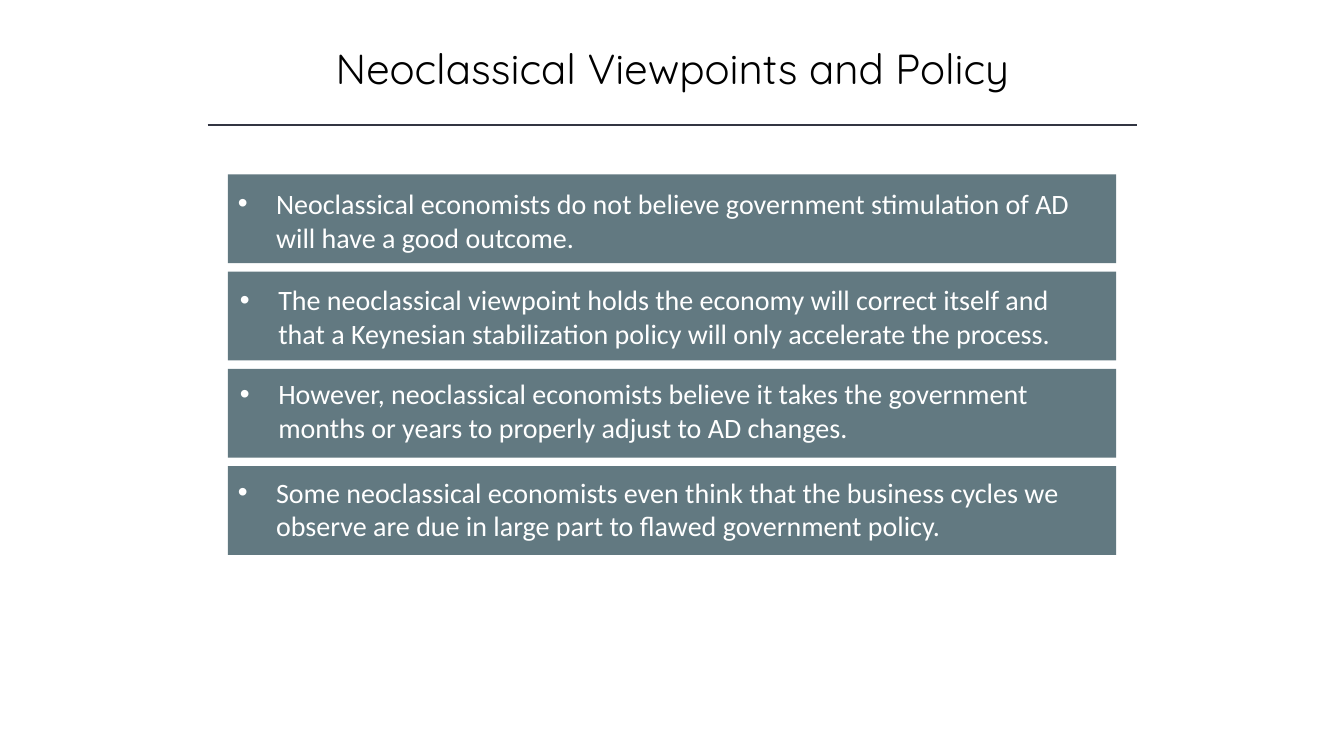
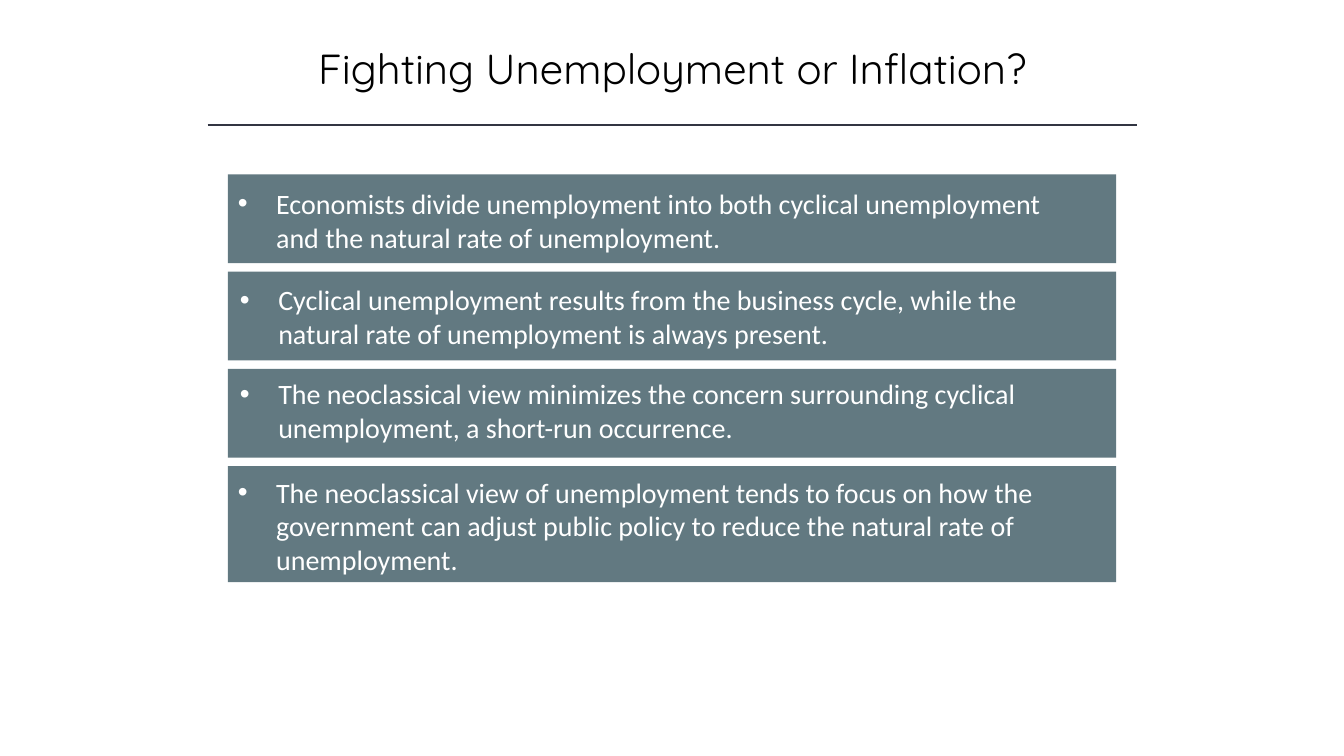
from dataclasses import dataclass

from lxml.etree import SubElement
from pptx import Presentation
from pptx.dml.color import RGBColor
from pptx.enum.shapes import MSO_CONNECTOR, MSO_SHAPE
from pptx.enum.text import MSO_ANCHOR, MSO_AUTO_SIZE, PP_ALIGN
from pptx.oxml.ns import qn
from pptx.util import Inches, Pt


@dataclass(frozen=True)
class Theme:
    title_color: RGBColor = RGBColor(0x00, 0x00, 0x00)
    rule_color: RGBColor = RGBColor(0x32, 0x35, 0x42)
    band_color: RGBColor = RGBColor(0x62, 0x79, 0x81)
    band_text_color: RGBColor = RGBColor(0xFF, 0xFF, 0xFF)
    title_font: str = "Quicksand"
    body_font: str = "Calibri"
    title_size: Pt = Pt(30)
    body_size: Pt = Pt(20)
    rule_width: Pt = Pt(1)


TITLE_ONLY = 5
BAND_LEFT, BAND_WIDTH = 2.26, 8.81
FIRST_BAND_TOP, BAND_PITCH = 1.73, 0.965
BAND_HEIGHT, TALL_BAND_HEIGHT = 0.88, 1.15
BULLET_INDENT = 0.38
# Left and top text margins of each band, from the first band down
BAND_MARGINS = [(0.1, 0.12), (0.12, 0.11), (0.12, 0.08), (0.1, 0.09)]
BAND_RIGHT_MARGIN = 0.37


class SlideBuilder:
    def __init__(self, deck, theme):
        self.deck = deck
        self.theme = theme
        self.page = None

    def add_page(self, title):
        layout = self.deck.slide_layouts[TITLE_ONLY]
        self.page = self.deck.slides.add_slide(layout)
        self.add_title(title)
        self.add_rule()

    def add_title(self, text):
        box = self.page.shapes.title
        box.left, box.top = Inches(1.67), Inches(0.37)
        box.width, box.height = Inches(10), Inches(0.61)
        frame = box.text_frame
        frame.text = text
        frame.auto_size = MSO_AUTO_SIZE.NONE
        frame.vertical_anchor = MSO_ANCHOR.TOP
        para = frame.paragraphs[0]
        para.alignment = PP_ALIGN.CENTER
        theme = self.theme
        self.style_runs(para, theme.title_font, theme.title_size, theme.title_color)

    def add_rule(self):
        rule = self.page.shapes.add_connector(
            MSO_CONNECTOR.STRAIGHT,
            Inches(2.06), Inches(1.24), Inches(11.28), Inches(1.24),
        )
        rule.line.color.rgb = self.theme.rule_color
        rule.line.width = self.theme.rule_width
        SubElement(rule._element.spPr, qn("a:effectLst"))

    def add_bands(self, texts, last_height=BAND_HEIGHT):
        """Stack one band per text; the last may be taller than the others."""
        heights = [BAND_HEIGHT] * (len(texts) - 1) + [last_height]
        for row, (text, height, margins) in enumerate(zip(texts, heights, BAND_MARGINS)):
            self.add_band(text, FIRST_BAND_TOP + row * BAND_PITCH, height, margins)

    def add_band(self, text, top, height, margins):
        theme = self.theme
        band = self.page.shapes.add_shape(
            MSO_SHAPE.RECTANGLE,
            Inches(BAND_LEFT), Inches(top), Inches(BAND_WIDTH), Inches(height),
        )
        band.shadow.inherit = False
        band.fill.solid()
        band.fill.fore_color.rgb = theme.band_color
        band.line.fill.background()

        frame = band.text_frame
        frame.text = text
        frame.word_wrap = True
        frame.vertical_anchor = MSO_ANCHOR.TOP
        frame.margin_left, frame.margin_top = (Inches(margin) for margin in margins)
        frame.margin_right, frame.margin_bottom = Inches(BAND_RIGHT_MARGIN), 0
        para = frame.paragraphs[0]
        para.alignment = PP_ALIGN.LEFT
        self.add_bullet(para)
        self.style_runs(para, theme.body_font, theme.body_size, theme.band_text_color)

    @staticmethod
    def add_bullet(para):
        properties = para._p.get_or_add_pPr()
        properties.set("marL", str(Inches(BULLET_INDENT)))
        properties.set("indent", str(-Inches(BULLET_INDENT)))
        SubElement(properties, qn("a:buFont"), typeface="Arial")
        SubElement(properties, qn("a:buChar"), char="•")

    @staticmethod
    def style_runs(para, font, size, color):
        for span in para.runs:
            span.font.name = font
            span.font.size = size
            span.font.color.rgb = color


def main():
    deck = Presentation()
    deck.slide_width, deck.slide_height = Inches(13.33), Inches(7.5)
    builder = SlideBuilder(deck, Theme())

    builder.add_page("Neoclassical Viewpoints and Policy")
    builder.add_bands([
        "Neoclassical economists do not believe government stimulation of AD "
        "will have a good outcome.",
        "The neoclassical viewpoint holds the economy will correct itself and "
        "that a Keynesian stabilization policy will only accelerate the process.",
        "However, neoclassical economists believe it takes the government "
        "months or years to properly adjust to AD changes.",
        "Some neoclassical economists even think that the business cycles we "
        "observe are due in large part to flawed government policy.",
    ])

    builder.add_page("Fighting Unemployment or Inflation?")
    builder.add_bands([
        "Economists divide unemployment into both cyclical unemployment "
        "and the natural rate of unemployment.",
        "Cyclical unemployment results from the business cycle, while the "
        "natural rate of unemployment is always present.",
        "The neoclassical view minimizes the concern surrounding cyclical "
        "unemployment, a short-run occurrence.",
        "The neoclassical view of unemployment tends to focus on how the "
        "government can adjust public policy to reduce the natural rate of "
        "unemployment.",
    ], last_height=TALL_BAND_HEIGHT)

    deck.save("out.pptx")


if __name__ == "__main__":
    main()
